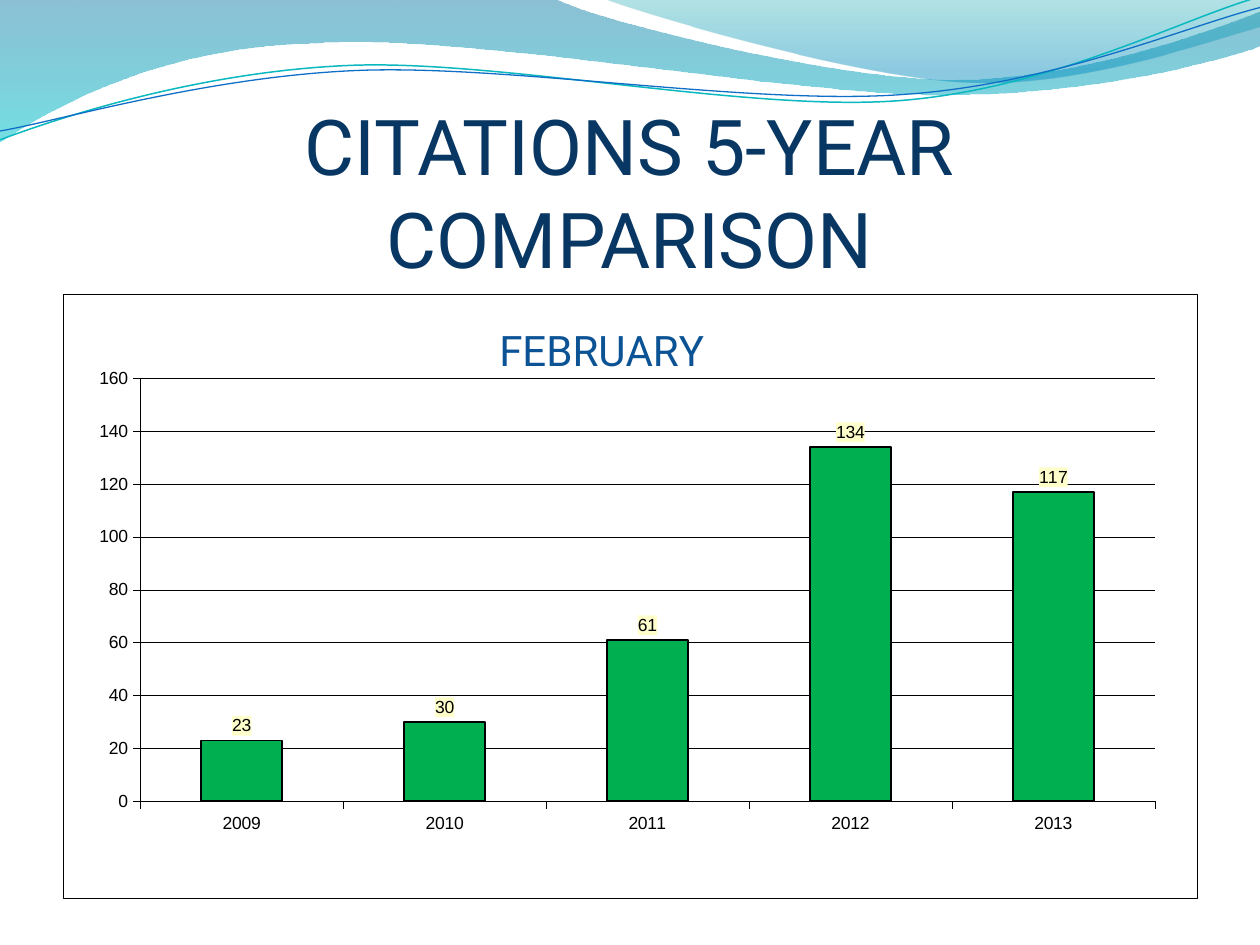
from dataclasses import dataclass
from typing import Optional

from lxml.etree import SubElement
from pptx import Presentation
from pptx.chart.data import CategoryChartData
from pptx.dml.color import RGBColor
from pptx.enum.chart import XL_CHART_TYPE, XL_LABEL_POSITION, XL_TICK_LABEL_POSITION, XL_TICK_MARK
from pptx.enum.text import MSO_ANCHOR, PP_ALIGN
from pptx.oxml import parse_xml
from pptx.oxml.ns import nsdecls, qn
from pptx.util import Inches, Pt

COLORS = {
    "title": "083763", "heading": "0B5394", "bar": "00B050", "ink": "000000",
    "paper": "FFFFFF", "label": "FFFFCC", "teal": "0AB8BF", "blue": "0F6FC6",
    "wave_top": "0074A1", "wave_end": "00C6CF", "crest_top": "00A1A9", "crest_end": "008BBF",
}
COL, ROW = 0.5, 0.25  # grid of 20 columns by 30 rows, in inches
UNITS = 100  # outline units to the inch

Point = tuple[float, float]


@dataclass
class Stop:
    position: float
    color: str
    opacity: int


@dataclass
class Wave:
    start: Point
    segments: list[tuple[Point, ...]]  # one point: line; three points: Bézier curve
    stops: Optional[tuple[Stop, Stop]] = None
    line: Optional[str] = None
    width: float = 0


WAVES = [
    Wave((0, 0), [((4.4, -0.01),),
                  ((4.76, 0.17), (6.64, 0.63), (7.58, 0.63)),
                  ((8.53, 0.63), (9.58, 0.26), (10, 0.09)),
                  ((10.01, 0.36),),
                  ((9.83, 0.44), (8.7, 0.76), (7.46, 0.75)),
                  ((6.22, 0.75), (3.82, 0.28), (2.57, 0.34)),
                  ((1.29, 0.36), (0.46, 0.83), (-0.01, 1.13))],
         stops=(Stop(0, "wave_top", 45), Stop(1, "wave_end", 55))),
    Wave((4.79, -0.01), [((5.09, 0.11), (6.82, 0.62), (7.69, 0.65)),
                         ((8.56, 0.69), (9.61, 0.32), (10, 0.21)),
                         ((10, 0),)],
         stops=(Stop(0, "crest_top", 30), Stop(0.8, "crest_end", 45))),
    Wave((0, 1.11), [((0.48, 0.93), (1.58, 0.57), (2.77, 0.52)),
                     ((3.95, 0.47), (5.93, 0.89), (7.13, 0.8)),
                     ((8.33, 0.71), (9.38, 0.15), (9.98, -0.02))],
         line="teal", width=0.85),
    Wave((0, 1.04), [((0.47, 0.96), (1.64, 0.61), (2.83, 0.56)),
                     ((4.03, 0.51), (5.97, 0.84), (7.17, 0.75)),
                     ((8.36, 0.67), (9.41, 0.21), (10, 0.06))],
         line="blue", width=0.75),
]
CITATIONS = {"2009": 23, "2010": 30, "2011": 61, "2012": 134, "2013": 117}


def rgb(name: str) -> RGBColor:
    return RGBColor.from_string(COLORS[name])


def grid(col: float, row: float, cols: float, rows: float) -> tuple:
    return Inches(col * COL), Inches(row * ROW), Inches(cols * COL), Inches(rows * ROW)


def set_font(font, name: str, size: float, color: str) -> None:
    font.name, font.size, font.bold = name, Pt(size), False
    font.color.rgb = rgb(color)


def set_line(line, color: str, width: float) -> None:
    line.color.rgb = rgb(color)
    line.width = Pt(width)


def bend(shape, segments: list[tuple[Point, ...]]) -> None:
    """Join the straight steps of each three-point segment into one curve."""
    steps = iter(list(shape._element.spPr.iter(qn("a:lnTo"))))
    for seg in segments:
        first, *others = [next(steps) for _ in seg]
        if others:
            first.tag = qn("a:cubicBezTo")
        for step in others:
            first.append(step[0])
            step.getparent().remove(step)


def draw_wave(s, wave: Wave) -> None:
    start, *rest = [(round(x * UNITS), round(y * UNITS))
                    for x, y in (wave.start, *(pt for seg in wave.segments for pt in seg))]
    builder = s.shapes.build_freeform(*start, scale=Inches(1) / UNITS)
    builder.add_line_segments(rest, close=wave.stops is not None)
    shape = builder.convert_to_shape()
    bend(shape, wave.segments)
    shape.shadow.inherit = False
    if wave.stops is None:
        shape.fill.background()
        set_line(shape.line, wave.line, wave.width)
        return
    shape.line.fill.background()
    shape.fill.gradient()
    shape.fill.gradient_angle = 270  # top to bottom
    for gs, stop in zip(shape.fill.gradient_stops, wave.stops):
        gs.color.rgb = rgb(stop.color)
        gs.position = stop.position
    for clr, stop in zip(shape._element.spPr.iter(qn("a:srgbClr")), wave.stops):
        SubElement(clr, qn("a:alpha"), val=str(stop.opacity * 1000))


def draw_title(s) -> None:
    tf = s.shapes.add_textbox(*grid(1, 4, 18, 5)).text_frame
    tf.word_wrap = True
    tf.vertical_anchor = MSO_ANCHOR.BOTTOM
    tf.margin_left = tf.margin_right = tf.margin_bottom = 0
    p = tf.paragraphs[0]
    p.text = "CITATIONS 5-YEAR\vCOMPARISON"
    p.alignment = PP_ALIGN.CENTER
    set_font(p.font, "Roboto", 44, "title")


def manual_layout(target: str = "", **percents: float):
    """Chart layout element, in percent of the chart's size."""
    inner = f'<c:layoutTarget val="{target}"/>' if target else ""
    modes = "".join(f'<c:{k}Mode val="edge"/>' for k in ("x", "y"))
    values = "".join(f'<c:{k} val="{v / 100:.3f}"/>' for k, v in percents.items())
    return parse_xml(f'<c:layout {nsdecls("c")}><c:manualLayout>{inner}{modes}{values}'
                     f'</c:manualLayout></c:layout>')


def chart_box(fill: str, line: str = ""):
    """Fill and optional hairline for a part of the chart."""
    def solid(color: str) -> str:
        return f'<a:solidFill><a:srgbClr val="{COLORS[color]}"/></a:solidFill>'
    edge = f'<a:ln w="{Pt(0.25)}">{solid(line)}</a:ln>' if line else "<a:ln><a:noFill/></a:ln>"
    return parse_xml(f'<c:spPr {nsdecls("c", "a")}>{solid(fill)}{edge}</c:spPr>')


def drop_layout(parent) -> None:
    for old in parent.findall(qn("c:layout")):
        parent.remove(old)


def draw_chart(s) -> None:
    data = CategoryChartData()
    data.categories = list(CITATIONS)
    data.add_series("Series 1", list(CITATIONS.values()))
    chart = s.shapes.add_chart(XL_CHART_TYPE.COLUMN_CLUSTERED,
                               *grid(1, 9.32, 18, 19.2), data).chart
    chart.has_legend = False
    set_font(chart.font, "Arial", 10, "ink")

    # Heading
    tf = chart.chart_title.text_frame
    tf.text = "FEBRUARY"
    set_font(tf.paragraphs[0].font, "Roboto", 24, "heading")
    chart.chart_title.include_in_layout = False
    title = chart.chart_title._element
    drop_layout(title)
    title.find(qn("c:tx")).addnext(manual_layout(x=37.8, y=3.5))

    # Axes
    for axis in (chart.category_axis, chart.value_axis):
        axis.major_tick_mark = XL_TICK_MARK.OUTSIDE
        axis.minor_tick_mark = XL_TICK_MARK.NONE
        set_font(axis.tick_labels.font, "Arial", 10, "ink")
        set_line(axis.format.line, "ink", 0.25)
    chart.category_axis.tick_label_position = XL_TICK_LABEL_POSITION.LOW
    axis = chart.value_axis
    axis.minimum_scale, axis.maximum_scale, axis.major_unit = 0, 160, 20
    set_line(axis.major_gridlines.format.line, "ink", 0.25)

    # Bars and their values
    plot = chart.plots[0]
    plot.gap_width = 150
    plot.vary_by_categories = False
    bars = plot.series[0]
    bars.format.fill.solid()
    bars.format.fill.fore_color.rgb = rgb("bar")
    set_line(bars.format.line, "ink", 1)
    labels = bars.data_labels
    labels.show_value = True
    labels.position = XL_LABEL_POSITION.OUTSIDE_END
    set_font(labels.font, "Arial", 10, "ink")
    labels._element.find(qn("c:txPr")).addprevious(chart_box("label"))

    # Frame and plot area
    frame = chart._chartSpace.find(qn("c:chart"))
    frame.addnext(chart_box("paper", "ink"))
    area = frame.find(qn("c:plotArea"))
    drop_layout(area)
    area.insert(0, manual_layout("inner", x=6.8, y=14, w=89.5, h=70))


def main() -> None:
    prs = Presentation()
    prs.slide_width, prs.slide_height = Inches(20 * COL), Inches(30 * ROW)
    s = prs.slides.add_slide(prs.slide_layouts[6])
    for wave in WAVES:
        draw_wave(s, wave)
    draw_title(s)
    draw_chart(s)
    prs.save("out.pptx")


if __name__ == "__main__":
    main()
